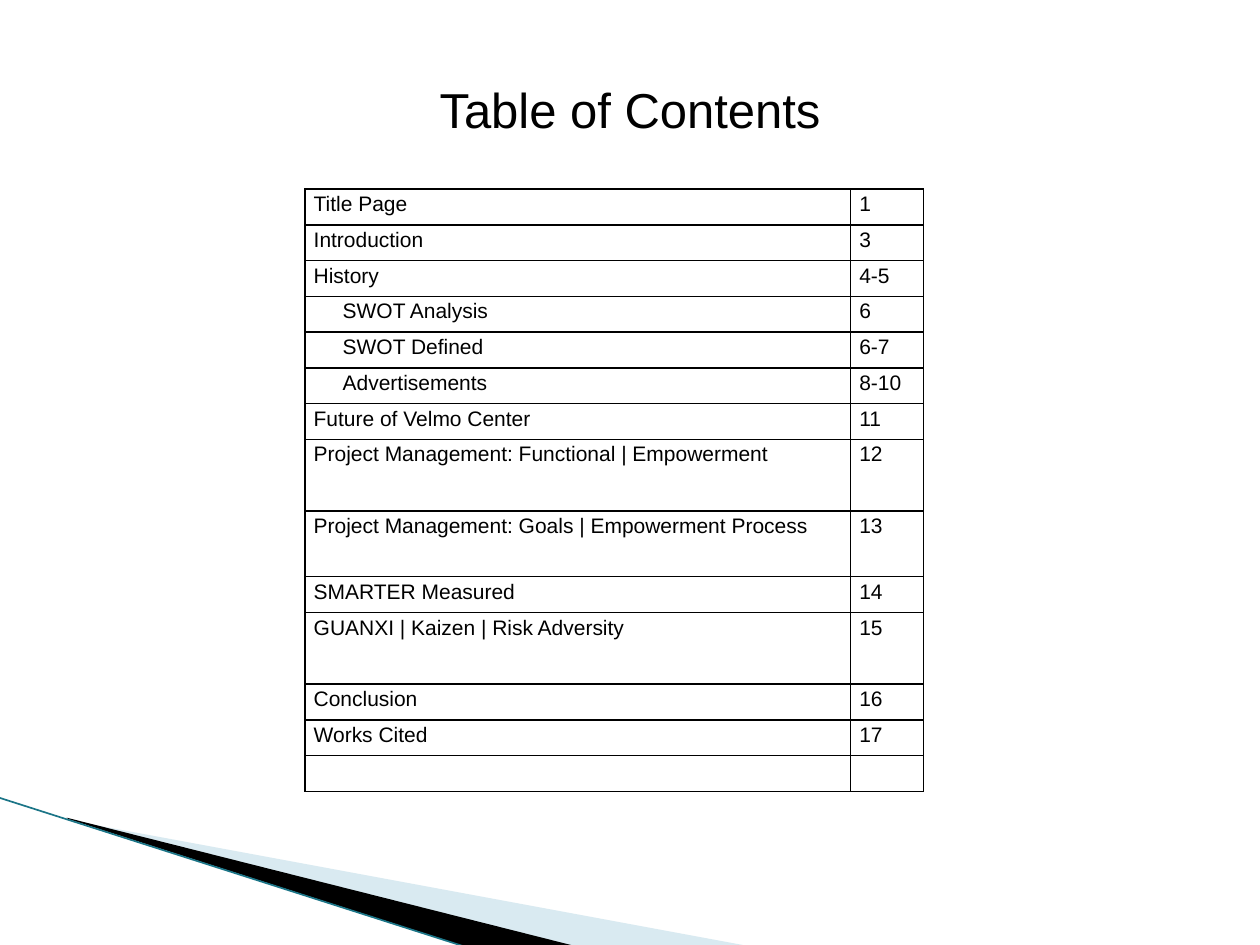
from dataclasses import dataclass

from lxml import etree
from pptx import Presentation
from pptx.dml.color import RGBColor
from pptx.enum.shapes import MSO_CONNECTOR
from pptx.enum.text import MSO_ANCHOR, PP_ALIGN
from pptx.oxml.ns import qn
from pptx.util import Inches, Pt

STRAIGHT = MSO_CONNECTOR.STRAIGHT
MIDDLE = MSO_ANCHOR.MIDDLE
CENTER = PP_ALIGN.CENTER
TITLE_ONLY = 5


@dataclass(frozen=True)
class Theme:
    """Colours, font and type sizes of the slide."""
    ink: str = "000000"
    pale_blue: str = "A0CBDC"
    teal: str = "1B7587"
    font: str = "Arial"
    title_size: int = 28
    body_size: int = 12


THEME = Theme()
ROW, TALL_ROW, TALLER_ROW = 0.284, 0.52, 0.57
INDENT = 0.23
CONTENTS = [
    ("Title Page", "1", ROW, 0),
    ("Introduction", "3", ROW, 0),
    ("History", "4-5", ROW, 0),
    ("SWOT Analysis", "6", ROW, INDENT),
    ("SWOT Defined", "6-7", ROW, INDENT),
    ("Advertisements", "8-10", ROW, INDENT),
    ("Future of Velmo Center", "11", ROW, 0),
    ("Project Management: Functional | Empowerment", "12", TALLER_ROW, 0),
    ("Project Management: Goals | Empowerment Process", "13", TALL_ROW, 0),
    ("SMARTER Measured", "14", ROW, 0),
    ("GUANXI | Kaizen | Risk Adversity", "15", TALLER_ROW, 0),
    ("Conclusion", "16", ROW, 0),
    ("Works Cited", "17", ROW, 0),
    ("", "", ROW, 0),
]


def rgb(colour):
    """Return the colour object for a hex string."""
    return RGBColor.from_string(colour)


def style_runs(paragraph, size):
    """Give every run of a paragraph the theme font and ink."""
    for run in paragraph.runs:
        run.font.name = THEME.font
        run.font.size = Pt(size)
        run.font.color.rgb = rgb(THEME.ink)


def add_wedge(slide, points, colour, opacity=100):
    """Draw a filled polygon through points given in inches."""
    corners = [(Inches(x), Inches(y)) for x, y in points]
    builder = slide.shapes.build_freeform(*corners[0], scale=1.0)
    builder.add_line_segments(corners[1:], close=True)
    shape = builder.convert_to_shape()
    shape.shadow.inherit = False
    shape.line.fill.background()
    shape.fill.solid()
    shape.fill.fore_color.rgb = rgb(colour)
    if opacity < 100:
        fill_colour = shape._element.spPr.find(qn("a:solidFill"))[0]
        etree.SubElement(fill_colour, qn("a:alpha"), val=str(opacity * 1000))


def add_edge(slide, start, end, colour, width):
    """Draw a straight line between two points given in inches."""
    ends = [Inches(value) for value in (*start, *end)]
    connector = slide.shapes.add_connector(STRAIGHT, *ends)
    connector.line.color.rgb = rgb(colour)
    connector.line.width = Pt(width)
    etree.SubElement(connector._element.spPr, qn("a:effectLst"))


def set_title(slide, text):
    """Place and format the title placeholder."""
    title = slide.shapes.title
    title.left, title.top = Inches(2), Inches(0.58)
    title.width, title.height = Inches(6), Inches(0.57)
    title.text_frame.text = text
    title.text_frame.vertical_anchor = MIDDLE
    paragraph = title.text_frame.paragraphs[0]
    paragraph.alignment = CENTER
    style_runs(paragraph, THEME.title_size)


def add_borders(cell):
    """Rule all four sides of a cell."""
    properties = cell._tc.get_or_add_tcPr()
    for side in ("lnL", "lnR", "lnT", "lnB"):
        line = etree.SubElement(properties, qn(f"a:{side}"), w=str(Pt(1)))
        fill = etree.SubElement(line, qn("a:solidFill"))
        etree.SubElement(fill, qn("a:srgbClr"), val=THEME.ink)


def fill_cell(cell, text, indent=0):
    """Write and format one table cell."""
    add_borders(cell)
    cell.fill.background()
    cell.margin_left = cell.margin_right = Inches(0.07)
    cell.margin_top = cell.margin_bottom = 0
    paragraph = cell.text_frame.paragraphs[0]
    paragraph.text = text
    paragraph.line_spacing = 1.15
    if indent:
        paragraph._p.get_or_add_pPr().set("marL", str(Inches(indent)))
    style_runs(paragraph, THEME.body_size)
    if not text:
        size = str(THEME.body_size * 100)
        etree.SubElement(paragraph._p, qn("a:endParaRPr"), sz=size)


def add_contents_table(slide):
    """Build the table of sections and page numbers."""
    frame = slide.shapes.add_table(
        len(CONTENTS), 2, Inches(2.42), Inches(1.5), Inches(4.91), Inches(4.77))
    table = frame.table
    table.first_row = table.horz_banding = False
    for column, width in zip(table.columns, (4.33, 0.58)):
        column.width = Inches(width)
    for index, (section, pages, height, indent) in enumerate(CONTENTS):
        table.rows[index].height = Inches(height)
        fill_cell(table.cell(index, 0), section, indent)
        fill_cell(table.cell(index, 1), pages)


def main():
    """Build and save the slide."""
    presentation = Presentation()
    presentation.slide_width = Inches(10)
    presentation.slide_height = Inches(7.5)
    slide = presentation.slides.add_slide(presentation.slide_layouts[TITLE_ONLY])
    add_wedge(slide, [(0.55, 6.51), (5.95, 7.51), (4.56, 7.51), (0.55, 6.5)],
              THEME.pale_blue, opacity=40)
    add_wedge(slide, [(0.53, 6.49), (4.57, 7.51), (3.72, 7.52), (0.54, 6.5)],
              THEME.ink)
    add_edge(slide, (-0.01, 6.33), (3.71, 7.52), THEME.teal, 0.95)
    add_contents_table(slide)
    set_title(slide, "Table of Contents")
    presentation.save("out.pptx")


if __name__ == "__main__":
    main()
